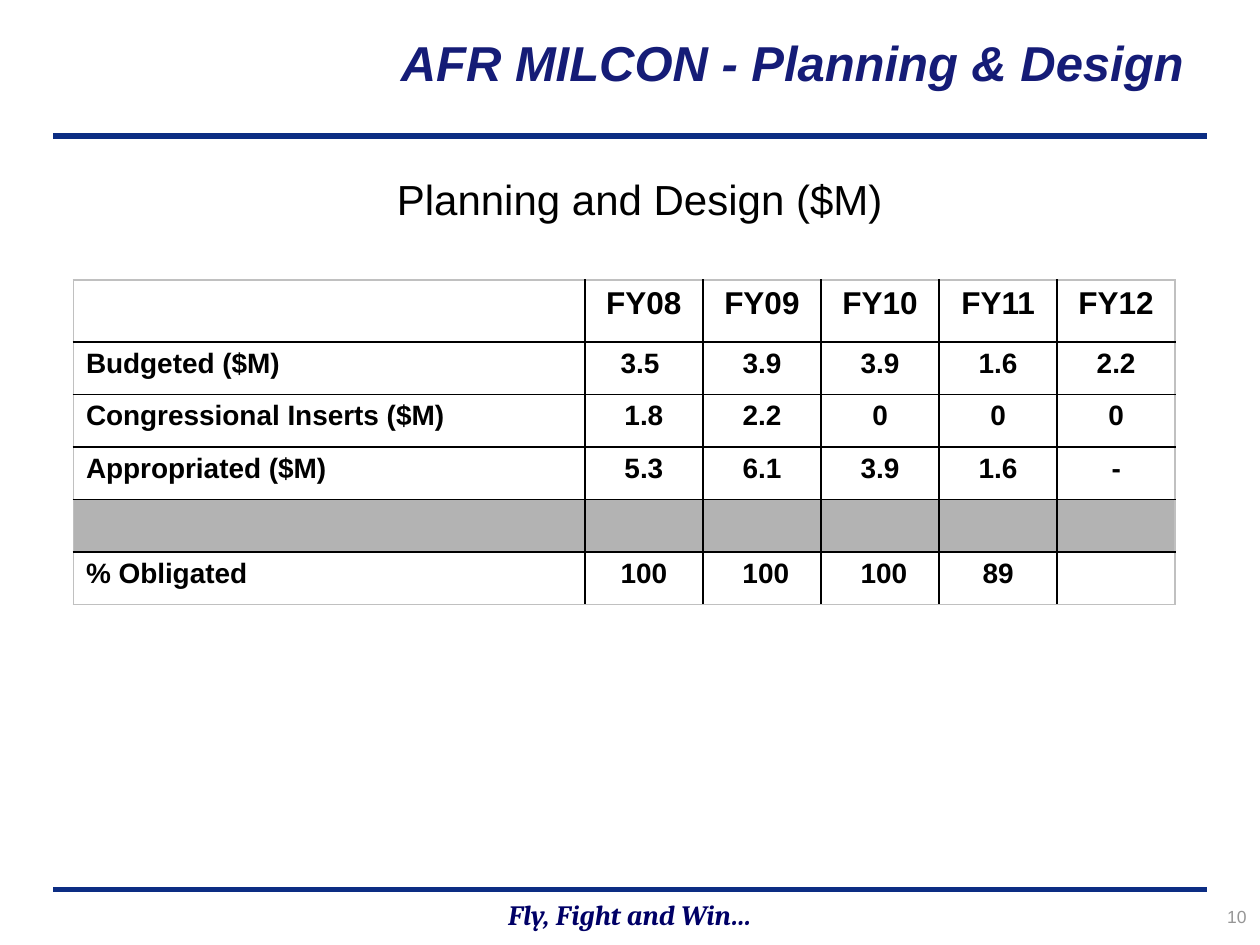
from lxml import etree
from pptx import Presentation
from pptx.dml.color import RGBColor
from pptx.enum.shapes import MSO_CONNECTOR
from pptx.enum.text import MSO_ANCHOR, PP_ALIGN
from pptx.oxml.ns import qn
from pptx.util import Cm, Pt

LEFT, CENTER, RIGHT = PP_ALIGN.LEFT, PP_ALIGN.CENTER, PP_ALIGN.RIGHT
TOP, MIDDLE = MSO_ANCHOR.TOP, MSO_ANCHOR.MIDDLE
STRAIGHT = MSO_CONNECTOR.STRAIGHT

COLORS = {
    "rule": "0C2D83",
    "title": "151C77",
    "motto": "000066",
    "number": "969696",
    "text": "000000",
    "spacer": "B3B3B3",
    "edge": "C0C0C0",
    "paper": "FFFFFF",
}

BUDGET = [
    ["", "FY08", "FY09", "FY10", "FY11", "FY12"],
    ["Budgeted ($M)", "3.5 ", "3.9", "3.9", "1.6", "2.2"],
    ["Congressional Inserts ($M)", "1.8", "2.2", "0", "0", "0"],
    ["Appropriated ($M)", "5.3", "6.1", "3.9", "1.6", "-"],
    [""] * 6,
    ["% Obligated", "100", " 100", " 100", "89", ""],
]
SPACER_ROW = 4


def color(name):
    return RGBColor.from_string(COLORS[name])


def write(frame, text, size=16, ink="text", font="Arial", bold=False,
          italic=False, align=LEFT, anchor=TOP, wrap=True):
    frame.word_wrap = wrap
    frame.vertical_anchor = anchor
    paragraph = frame.paragraphs[0]
    paragraph.alignment = align
    paragraph.space_before = Pt(0)
    if not text:
        paragraph.font.size = Pt(size)
        return
    run = paragraph.add_run()
    run.text = text
    run.font.name = font
    run.font.size = Pt(size)
    run.font.bold = bold
    run.font.italic = italic
    run.font.color.rgb = color(ink)


class BriefingSlide:
    def __init__(self, deck):
        self.slide = deck.slides.add_slide(deck.slide_layouts[5])

    def title(self, text, left, top, width, height):
        heading = self.slide.shapes.title
        heading.left, heading.top = Cm(left), Cm(top)
        heading.width, heading.height = Cm(width), Cm(height)
        write(heading.text_frame, text, size=28, ink="title", bold=True,
              italic=True, align=RIGHT, anchor=MIDDLE)

    def label(self, text, left, top, width, height, **style):
        box = self.slide.shapes.add_textbox(Cm(left), Cm(top), Cm(width), Cm(height))
        write(box.text_frame, text, **style)

    def rule(self, top, left=1.07, right=24.33):
        line = self.slide.shapes.add_connector(
            STRAIGHT, Cm(left), Cm(top), Cm(right), Cm(top))
        line.line.color.rgb = color("rule")
        line.line.width = Pt(3)
        etree.SubElement(line._element.spPr, qn("a:effectLst"))

    def border(self, cell, outer_sides):
        properties = cell._tc.get_or_add_tcPr()
        for side in "LRTB":
            outer = side in outer_sides
            edge = etree.SubElement(properties, qn(f"a:ln{side}"), w=str(Pt(1)))
            fill = etree.SubElement(edge, qn("a:solidFill"))
            etree.SubElement(fill, qn("a:srgbClr"),
                             val=COLORS["edge" if outer else "text"])

    def table(self, rows, left, top, widths, heights):
        grid = self.slide.shapes.add_table(
            len(rows), len(widths), Cm(left), Cm(top),
            Cm(sum(widths)), Cm(sum(heights))).table
        grid.first_row = grid.horz_banding = False
        for column, width in zip(grid.columns, widths):
            column.width = Cm(width)
        for row, height in zip(grid.rows, heights):
            row.height = Cm(height)
        last_row, last_column = len(rows) - 1, len(widths) - 1
        for r, values in enumerate(rows):
            for c, value in enumerate(values):
                cell = grid.cell(r, c)
                at_edge = {"L": c == 0, "R": c == last_column,
                           "T": r == 0, "B": r == last_row}
                self.border(cell, [side for side, outer in at_edge.items() if outer])
                cell.fill.solid()
                cell.fill.fore_color.rgb = color("spacer" if r == SPACER_ROW else "paper")
                write(cell.text_frame, value, size=16 if r else 18, bold=True,
                      align=CENTER if c else LEFT)


def main():
    deck = Presentation()
    deck.slide_width, deck.slide_height = Cm(25.4), Cm(19.05)
    briefing = BriefingSlide(deck)
    for top in (2.74, 17.93):
        briefing.rule(top)
    briefing.label("Fly, Fight and Win…", 0, 17.96, 25.4, 0.94, size=16, ink="motto",
                   font="Cambria", bold=True, italic=True, align=CENTER, anchor=MIDDLE)
    briefing.label("10", 22.2, 18.14, 3.18, 0.84, size=10, ink="number", align=RIGHT)
    briefing.title("AFR MILCON - Planning & Design ", 3.18, 0, 21.21, 2.51)
    briefing.table(BUDGET, 1.48, 5.64, [10.31] + [2.38] * 5, [1.25] + [1.06] * 5)
    briefing.label("Planning and Design ($M)", 7.42, 3.38, 10.95, 1.3, size=24,
                   align=CENTER, wrap=False)
    deck.save("out.pptx")


if __name__ == "__main__":
    main()
